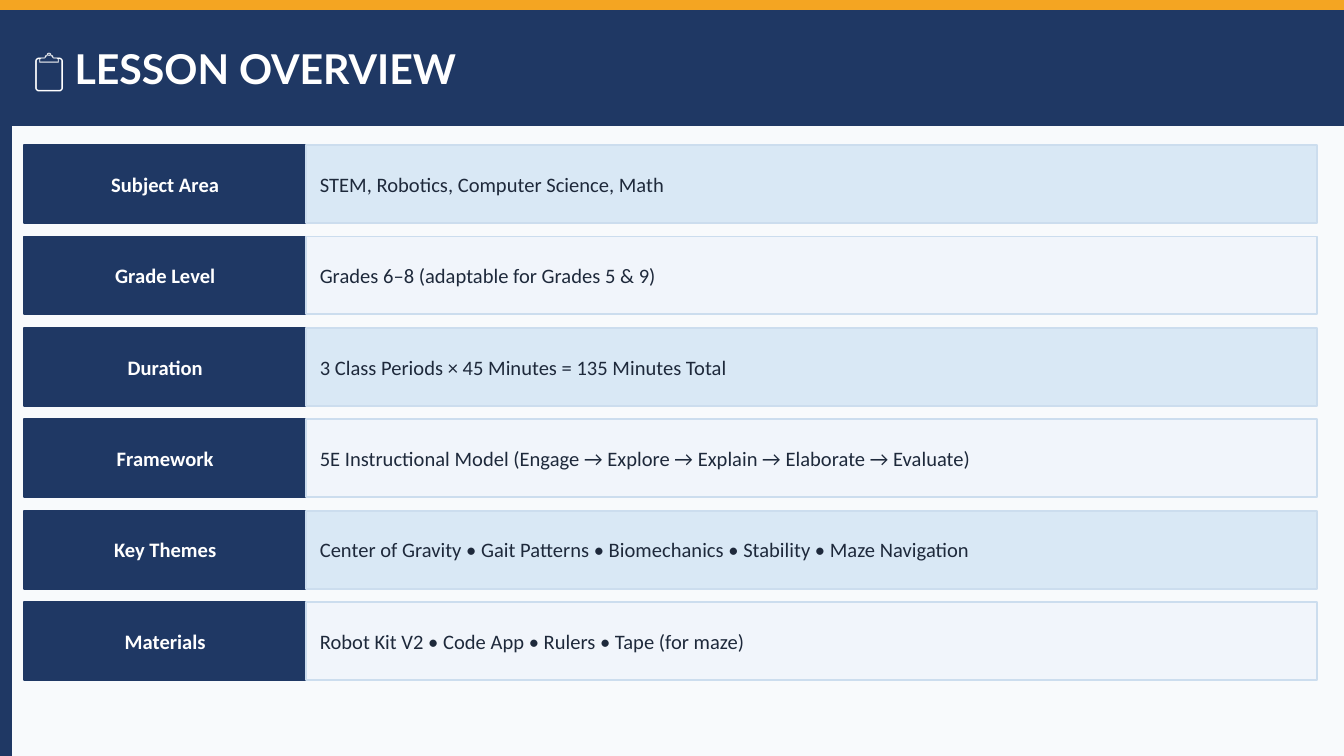
"""Build the lesson overview slide: a title band above six label and detail rows."""
import pptx
import pptx.dml.color
import pptx.enum.shapes
import pptx.enum.text
import pptx.util

TITLE = "📋 LESSON OVERVIEW"
ROWS = [
    ("Subject Area", "STEM, Robotics, Computer Science, Math"),
    ("Grade Level", "Grades 6–8 (adaptable for Grades 5 & 9)"),
    ("Duration", "3 Class Periods × 45 Minutes = 135 Minutes Total"),
    ("Framework", "5E Instructional Model (Engage → Explore → Explain → Elaborate → Evaluate)"),
    ("Key Themes", "Center of Gravity • Gait Patterns • Biomechanics • Stability • Maze Navigation"),
    ("Materials", "Robot Kit V2 • Code App • Rulers • Tape (for maze)"),
]

THEME = {
    "background": "F8FAFC",
    "accent": "F4A522",
    "navy": "1F3864",
    "stripes": ("D9E8F5", "F1F5FB"),
    "border": "CCDDEE",
    "title": {"name": "Lato", "size": 22, "bold": True, "color": "FFFFFF"},
    "label": {"name": "Calibri", "size": 11, "bold": True, "color": "FFFFFF"},
    "detail": {"name": "Calibri", "size": 11, "bold": False, "color": "1E293B"},
}

EMU_PER_PX = 4572
SLIDE_WIDTH, SLIDE_HEIGHT = 2000, 1125
EDGE = 16
BAND_HEIGHT = 170
LABEL_LEFT, LABEL_WIDTH = 36, 420
DETAIL_LEFT, DETAIL_WIDTH = LABEL_LEFT + LABEL_WIDTH, 1504
DETAIL_INSET, DETAIL_TEXT_WIDTH = 20, 1460
ROW_TOP, ROW_HEIGHT, ROW_STEP = 216, 116, 136


def emu(*lengths):
    return [pptx.util.Emu(length * EMU_PER_PX) for length in lengths]


def rgb(value):
    return pptx.dml.color.RGBColor.from_string(value)


def add_panel(slide, box, fill, border=None):
    shape = slide.shapes.add_shape(pptx.enum.shapes.MSO_SHAPE.RECTANGLE, *emu(*box))
    shape.shadow.inherit = False
    shape.fill.solid()
    shape.fill.fore_color.rgb = rgb(fill)
    shape.line.color.rgb = rgb(border or fill)
    shape.line.width = pptx.util.Pt(1)


def add_text(slide, box, text, style, alignment=pptx.enum.text.PP_ALIGN.LEFT):
    frame = slide.shapes.add_textbox(*emu(*box)).text_frame
    frame_format = {
        "word_wrap": True,
        "vertical_anchor": pptx.enum.text.MSO_ANCHOR.MIDDLE,
        "margin_left": 0,
        "margin_top": 0,
        "margin_right": 0,
        "margin_bottom": 0,
    }
    for name, value in frame_format.items():
        setattr(frame, name, value)
    paragraph = frame.paragraphs[0]
    paragraph.alignment = alignment
    run = paragraph.add_run()
    run.text = text
    font_format = {"name": style["name"], "size": pptx.util.Pt(style["size"]), "bold": style["bold"]}
    for name, value in font_format.items():
        setattr(run.font, name, value)
    run.font.color.rgb = rgb(style["color"])


def add_row(slide, index, label, detail):
    top = ROW_TOP + index * ROW_STEP
    label_box = (LABEL_LEFT, top, LABEL_WIDTH, ROW_HEIGHT)
    detail_box = (DETAIL_LEFT, top, DETAIL_WIDTH, ROW_HEIGHT)
    detail_text_box = (DETAIL_LEFT + DETAIL_INSET, top, DETAIL_TEXT_WIDTH, ROW_HEIGHT)
    stripes = THEME["stripes"]
    add_panel(slide, label_box, THEME["navy"])
    add_text(slide, label_box, label, THEME["label"], pptx.enum.text.PP_ALIGN.CENTER)
    add_panel(slide, detail_box, stripes[index % len(stripes)], THEME["border"])
    add_text(slide, detail_text_box, detail, THEME["detail"])


def main():
    presentation = pptx.Presentation()
    presentation.slide_width, presentation.slide_height = emu(SLIDE_WIDTH, SLIDE_HEIGHT)
    slide = presentation.slides.add_slide(presentation.slide_layouts[6])
    slide.background.fill.solid()
    slide.background.fill.fore_color.rgb = rgb(THEME["background"])

    add_panel(slide, (0, 0, SLIDE_WIDTH, EDGE), THEME["accent"])
    add_panel(slide, (0, EDGE, EDGE, SLIDE_HEIGHT - EDGE), THEME["navy"])
    add_panel(slide, (EDGE, EDGE, SLIDE_WIDTH - EDGE, BAND_HEIGHT), THEME["navy"])
    add_text(slide, (50, EDGE, 1900, BAND_HEIGHT), TITLE, THEME["title"])

    for index, (label, detail) in enumerate(ROWS):
        add_row(slide, index, label, detail)
    presentation.save("out.pptx")


if __name__ == "__main__":
    main()
